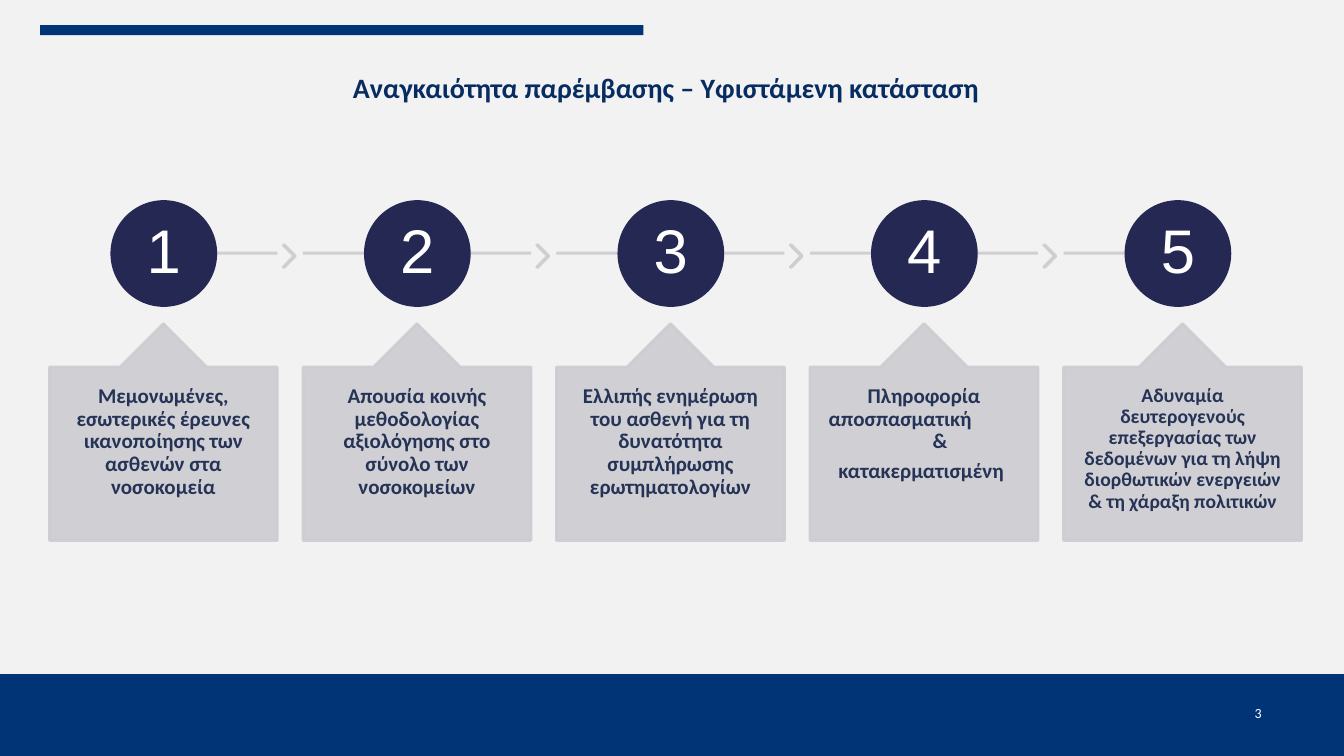
from dataclasses import dataclass

from lxml.etree import SubElement
from pptx import Presentation
from pptx.dml.color import RGBColor
from pptx.enum.shapes import MSO_CONNECTOR, MSO_SHAPE
from pptx.enum.text import MSO_ANCHOR, PP_ALIGN
from pptx.oxml.ns import qn
from pptx.shapes.autoshape import Shape
from pptx.slide import Slide
from pptx.text.text import TextFrame
from pptx.util import Pt

PAPER = RGBColor(0xF2, 0xF2, 0xF2)
BLUE = RGBColor(0x01, 0x34, 0x76)
TITLE_BLUE = RGBColor(0x07, 0x2C, 0x62)
NAVY = RGBColor(0x24, 0x28, 0x52)
CARD_TEXT = RGBColor(0x25, 0x33, 0x56)
GREY = RGBColor(0xCD, 0xCD, 0xD1)
WHITE = RGBColor(0xFF, 0xFF, 0xFF)

FIRST_LEFT = 35.3
PITCH = 181.1
CARD_WIDTH = 162.8
CARD_TOP = 231.2
CIRCLE_OFFSET = 44.6
CIRCLE_SIZE = 74.2
CIRCLE_TOP = 144
LINE_Y = 180.8


@dataclass(frozen=True)
class Line:
    text: str
    left_indent: float = 0
    right_indent: float = 0
    space_after: float = 0


@dataclass(frozen=True)
class Step:
    lines: tuple[Line, ...]
    width: float = CARD_WIDTH
    size: float = 15


STEPS = (
    Step((Line("Μεμονωμένες, εσωτερικές έρευνες ικανοποίησης των ασθενών στα νοσοκομεία"),)),
    Step((Line("Απουσία κοινής μεθοδολογίας αξιολόγησης στο σύνολο των νοσοκομείων"),)),
    Step((Line("Ελλιπής ενημέρωση του ασθενή για τη δυνατότητα συμπλήρωσης ερωτηματολογίων"),)),
    Step((
        Line("Πληροφορία"),
        Line("αποσπασματική", right_indent=34),
        Line("&", left_indent=23, space_after=5.25),
        Line("κατακερματισμένη", right_indent=4),
    )),
    Step((Line("Αδυναμία δευτερογενούς επεξεργασίας των δεδομένων για τη λήψη "
               "διορθωτικών ενεργειών & τη χάραξη πολιτικών"),), width=170, size=14),
)


def set_insets(frame: TextFrame, left: float, top: float, right: float, bottom: float) -> None:
    frame.margin_left, frame.margin_top = Pt(left), Pt(top)
    frame.margin_right, frame.margin_bottom = Pt(right), Pt(bottom)
    frame.word_wrap = True


def write_lines(frame: TextFrame, lines: tuple[Line, ...], size: float, color: RGBColor,
                font: str = "Calibri", bold: bool = False,
                align: PP_ALIGN = PP_ALIGN.CENTER) -> None:
    for index, line in enumerate(lines):
        para = frame.paragraphs[0] if index == 0 else frame.add_paragraph()
        properties = para._p.get_or_add_pPr()
        properties.set("marL", str(Pt(line.left_indent)))
        properties.set("marR", str(Pt(line.right_indent)))
        properties.set("indent", "0")
        para.alignment = align
        para.line_spacing = 0.9
        para.space_before = Pt(0)
        para.space_after = Pt(line.space_after)
        span = para.add_run()
        span.text = line.text
        span.font.name = font
        span.font.size = Pt(size)
        span.font.bold = bold
        span.font.color.rgb = color


def make_translucent(element) -> None:
    """Give every colour inside the element 90% opacity."""
    for color in element.iter(qn("a:srgbClr")):
        SubElement(color, qn("a:alpha")).set("val", "90000")


def add_box(page: Slide, kind: MSO_SHAPE, left: float, top: float, width: float,
            height: float, color: RGBColor, line_width: float = 0) -> Shape:
    box = page.shapes.add_shape(kind, Pt(left), Pt(top), Pt(width), Pt(height))
    box.shadow.inherit = False
    box.fill.solid()
    box.fill.fore_color.rgb = color
    if line_width:
        box.line.color.rgb = color
        box.line.width = Pt(line_width)
    else:
        box.line.fill.background()
    return box


def add_track(page: Slide, start: float, end: float) -> None:
    track = page.shapes.add_connector(
        MSO_CONNECTOR.STRAIGHT, Pt(start), Pt(LINE_Y), Pt(end), Pt(LINE_Y))
    track.line.color.rgb = GREY
    track.line.width = Pt(2)
    properties = track._element.spPr
    SubElement(properties, qn("a:effectLst"))
    make_translucent(properties)


def add_step(page: Slide, index: int, step: Step) -> None:
    left = FIRST_LEFT + index * PITCH
    circle_center = left + CIRCLE_OFFSET + CIRCLE_SIZE / 2
    is_first, is_last = index == 0, index == len(STEPS) - 1

    add_track(page, circle_center if is_first else left,
              circle_center if is_last else left + CARD_WIDTH)
    if not is_last:
        chevron = add_box(page, MSO_SHAPE.CHEVRON, left + 167, 175, 8.6, 15.8, GREY, 2)
        chevron.adjustments[0] = 0.9
        make_translucent(chevron._element.spPr)

    circle = add_box(page, MSO_SHAPE.OVAL, left + CIRCLE_OFFSET, CIRCLE_TOP,
                     CIRCLE_SIZE, CIRCLE_SIZE, NAVY, 2)
    set_insets(circle.text_frame, 3, 3, 3, 3)
    circle.text_frame.vertical_anchor = MSO_ANCHOR.MIDDLE
    write_lines(circle.text_frame, (Line(str(index + 1)),), 44, WHITE, "Arial")

    card = add_box(page, MSO_SHAPE.UP_ARROW_CALLOUT, left, CARD_TOP, step.width, 154.8, GREY, 2)
    for position, value in enumerate((0.4, 0.2, 0.2, 0.8)):
        card.adjustments[position] = value
    make_translucent(card._element.spPr)
    set_insets(card.text_frame, 13, 13, 13, 13)
    card.text_frame.vertical_anchor = MSO_ANCHOR.TOP
    write_lines(card.text_frame, step.lines, step.size, CARD_TEXT, bold=True)


def add_title(page: Slide) -> None:
    title = page.shapes.title
    title.left, title.top, title.width, title.height = Pt(0), Pt(26), Pt(960), Pt(52.5)
    title.fill.solid()
    title.fill.fore_color.rgb = PAPER
    set_insets(title.text_frame, 8.6, 3.6, 17, 3.6)
    title.text_frame.vertical_anchor = MSO_ANCHOR.BOTTOM
    write_lines(title.text_frame, (Line("Αναγκαιότητα παρέμβασης – Υφιστάμενη κατάσταση"),),
                20, TITLE_BLUE, bold=True)


def add_page_number(page: Slide) -> None:
    box = page.shapes.add_textbox(Pt(889.2), Pt(489.6), Pt(41), Pt(41))
    set_insets(box.text_frame, 7.2, 7.2, 7.2, 7.2)
    box.text_frame.vertical_anchor = MSO_ANCHOR.MIDDLE
    write_lines(box.text_frame, (Line("3"),), 10, WHITE, align=PP_ALIGN.LEFT)


def main() -> None:
    deck = Presentation()
    deck.slide_width, deck.slide_height = Pt(960), Pt(540)
    page = deck.slides.add_slide(deck.slide_layouts[5])
    page.background.fill.solid()
    page.background.fill.fore_color.rgb = PAPER

    add_title(page)
    add_box(page, MSO_SHAPE.RECTANGLE, 0, 481.5, 960, 58.5, BLUE)
    add_box(page, MSO_SHAPE.RECTANGLE, 28.6, 18, 431, 7.2, BLUE)
    add_page_number(page)
    for index, step in enumerate(STEPS):
        add_step(page, index, step)
    deck.save("out.pptx")


if __name__ == "__main__":
    main()
